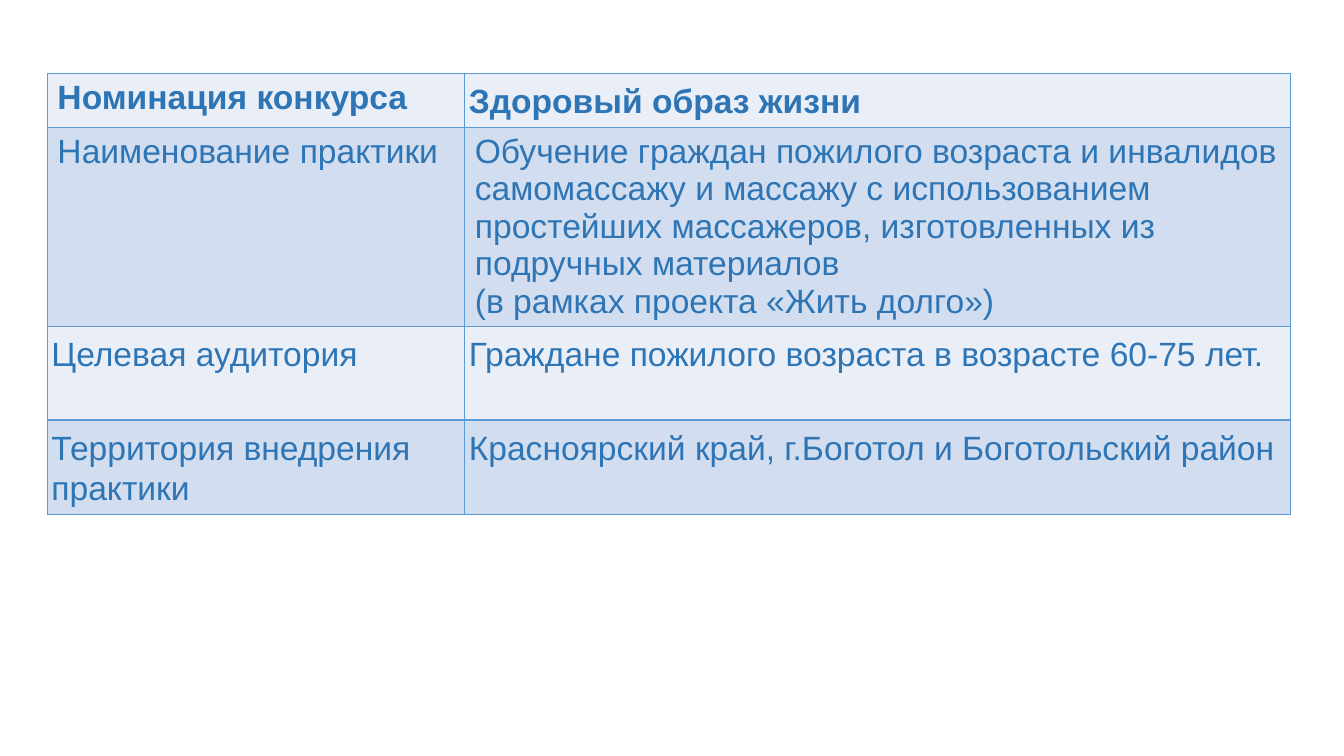
from dataclasses import dataclass

from lxml import etree
from pptx import Presentation
from pptx.dml.color import RGBColor
from pptx.oxml.ns import qn
from pptx.table import Table, _Cell
from pptx.util import Inches, Pt

TEXT_COLOR = "2E75B6"
BORDER_COLOR = "5B9BD5"
BAND_COLORS = ("EAEFF7", "D2DEEF")
COLUMN_WIDTHS = (4.14, 8.19)


@dataclass(frozen=True)
class CellText:
    text: str
    compact: bool = True


@dataclass(frozen=True)
class PracticeRow:
    height: float
    label: CellText
    value: CellText
    bold: bool = False


PRACTICE_ROWS = (
    PracticeRow(
        0.53,
        CellText("Номинация конкурса", compact=False),
        CellText("Здоровый образ жизни"),
        bold=True,
    ),
    PracticeRow(
        1.97,
        CellText("Наименование практики", compact=False),
        CellText(
            "Обучение граждан пожилого возраста и инвалидов самомассажу и массажу "
            "с использованием простейших массажеров, изготовленных из подручных материалов\n"
            "(в рамках проекта «Жить долго»)",
            compact=False,
        ),
    ),
    PracticeRow(
        0.93,
        CellText("Целевая аудитория"),
        CellText("Граждане пожилого возраста в возрасте 60-75 лет."),
    ),
    PracticeRow(
        0.94,
        CellText("Территория внедрения практики"),
        CellText("Красноярский край, г.Боготол и Боготольский район"),
    ),
)


def color(value: str) -> RGBColor:
    return RGBColor.from_string(value)


def add_borders(cell: _Cell) -> None:
    properties = cell._tc.get_or_add_tcPr()
    for side in ("a:lnL", "a:lnR", "a:lnT", "a:lnB"):
        line = etree.SubElement(properties, qn(side), w=str(Pt(1)))
        fill = etree.SubElement(line, qn("a:solidFill"))
        etree.SubElement(fill, qn("a:srgbClr"), val=BORDER_COLOR)


def fill_cell(cell: _Cell, content: CellText, bold: bool, background: str) -> None:
    add_borders(cell)
    cell.fill.solid()
    cell.fill.fore_color.rgb = color(background)
    if content.compact:
        cell.margin_left = cell.margin_right = Inches(0.04)
        cell.margin_top = cell.margin_bottom = Inches(0.07)
    cell.text = content.text
    for paragraph in cell.text_frame.paragraphs:
        if content.compact:
            paragraph.line_spacing = 1.07
        font = paragraph.font
        font.name = "Arial"
        font.size = Pt(24)
        font.bold = bold
        font.color.rgb = color(TEXT_COLOR)


def fill_table(table: Table) -> None:
    for column, width in zip(table.columns, COLUMN_WIDTHS):
        column.width = Inches(width)
    for index, practice_row in enumerate(PRACTICE_ROWS):
        table.rows[index].height = Inches(practice_row.height)
        background = BAND_COLORS[index % len(BAND_COLORS)]
        contents = (practice_row.label, practice_row.value)
        for cell, content in zip(table.rows[index].cells, contents):
            fill_cell(cell, content, practice_row.bold, background)


def main() -> None:
    presentation = Presentation()
    presentation.slide_width = Inches(13.33)
    presentation.slide_height = Inches(7.5)
    slide = presentation.slides.add_slide(presentation.slide_layouts[6])
    table_frame = slide.shapes.add_table(
        len(PRACTICE_ROWS),
        len(COLUMN_WIDTHS),
        Inches(0.47),
        Inches(0.73),
        Inches(sum(COLUMN_WIDTHS)),
        Inches(sum(row.height for row in PRACTICE_ROWS)),
    )
    fill_table(table_frame.table)
    presentation.save("out.pptx")


if __name__ == "__main__":
    main()
